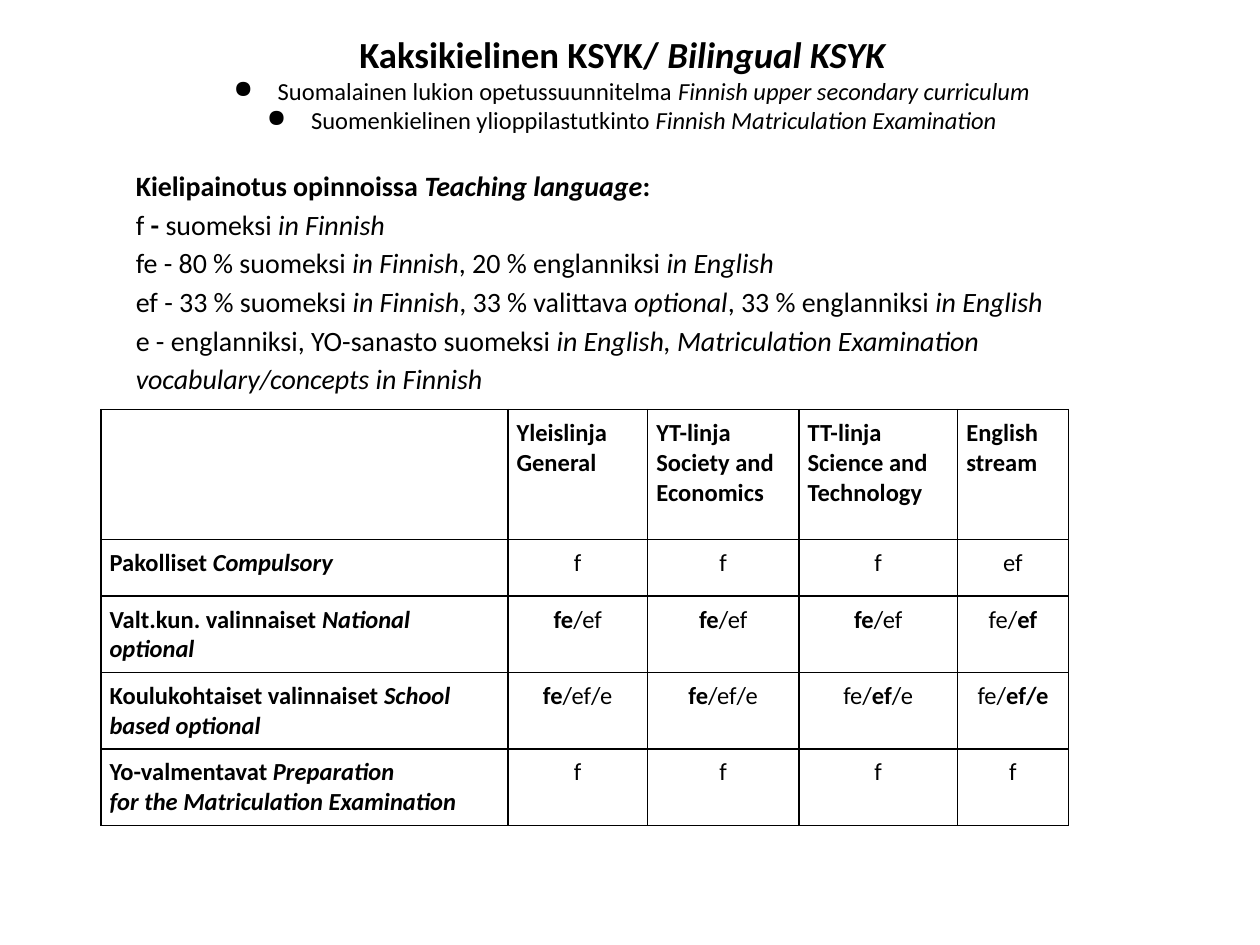
from dataclasses import dataclass

from lxml.etree import SubElement
from pptx import Presentation
from pptx.dml.color import RGBColor
from pptx.enum.text import MSO_ANCHOR, PP_ALIGN
from pptx.oxml.ns import qn
from pptx.util import Inches, Pt


@dataclass(frozen=True)
class Theme:
    font: str = "Calibri"
    ink: str = "000000"
    title: int = 21
    body: int = 16
    small: int = 14
    border: float = 1
    spacing: float = 1.15


THEME = Theme()

# In all wording, *...* is bold and _..._ is italic
TITLE = "*Kaksikielinen KSYK/ _Bilingual KSYK_*"
BULLETS = [
    "Suomalainen lukion opetussuunnitelma _Finnish upper secondary curriculum_",
    "Suomenkielinen ylioppilastutkinto _Finnish Matriculation Examination_",
]
LANGUAGES = [
    "*Kielipainotus opinnoissa _Teaching language_:*",
    "f* - *suomeksi _in Finnish_",
    "fe - 80 % suomeksi _in Finnish_, 20 % englanniksi _in English_",
    "ef - 33 % suomeksi _in Finnish_, 33 % valittava _optional_, 33 % englanniksi _in English_",
    "e - englanniksi, YO-sanasto suomeksi "
    "_in English, Matriculation Examination vocabulary/concepts in Finnish_",
]
STREAMS = [
    ["", "*Yleislinja*\n*General*", "*YT-linja*\n*Society and Economics*",
     "*TT-linja*\n*Science and Technology*", "*English stream*"],
    ["*Pakolliset _Compulsory_*", "f", "f", "f", "ef"],
    ["*Valt.kun. valinnaiset _National optional_*",
     "*fe*/ef", "*fe*/ef", "*fe*/ef", "fe/*ef*"],
    ["*Koulukohtaiset valinnaiset _School based optional_*",
     "*fe*/ef/e", "*fe*/ef/e", "fe/*ef*/e", "fe/*ef/e*"],
    ["*Yo-valmentavat _Preparation_*\n*_for the Matriculation Examination_*",
     "f", "f", "f", "f"],
]
COLUMNS = [3.23, 1.11, 1.2, 1.26, 0.88]
ROWS = [1.03, 0.45, 0.45, 0.45, 0.45]


def write(para, wording, size, align=PP_ALIGN.LEFT, spacing=1.0):
    para.alignment = align
    para.line_spacing = spacing
    para.font.name = THEME.font
    para.font.size = Pt(size)
    para.font.color.rgb = RGBColor.from_string(THEME.ink)
    italic = False
    for i, stretch in enumerate(wording.split("*")):
        for j, piece in enumerate(stretch.split("_")):
            if j:
                italic = not italic
            if piece:
                span = para.add_run()
                span.text = piece
                span.font.bold = i % 2 == 1
                span.font.italic = italic


def indent(para, left, first=0.0, bullet=None):
    properties = para._p.get_or_add_pPr()
    properties.set("marL", str(Inches(left)))
    properties.set("indent", str(Inches(first)))
    if bullet:
        SubElement(properties, qn("a:buChar"), char=bullet)


def add_frame(page, left, top, width, height, inset_top=0.1):
    frame = page.shapes.add_textbox(
        Inches(left), Inches(top), Inches(width), Inches(height)).text_frame
    frame.word_wrap = True
    frame.vertical_anchor = MSO_ANCHOR.TOP
    frame.margin_left = frame.margin_right = frame.margin_bottom = Inches(0.1)
    frame.margin_top = Inches(inset_top)
    return frame


def add_heading(page, left, top, width, height):
    frame = add_frame(page, left, top, width, height, inset_top=0.07)
    write(frame.paragraphs[0], TITLE, THEME.title, PP_ALIGN.CENTER, THEME.spacing)
    for wording in BULLETS:
        para = frame.add_paragraph()
        indent(para, 0.5, -0.35, "●")
        write(para, wording, THEME.small, PP_ALIGN.CENTER)


def add_languages(page, left, top, width, height):
    frame = add_frame(page, left, top, width, height)
    for i, wording in enumerate(LANGUAGES):
        para = frame.add_paragraph() if i else frame.paragraphs[0]
        indent(para, 0.5)
        write(para, wording, THEME.body, spacing=THEME.spacing)


def draw_borders(cell):
    properties = cell._tc.get_or_add_tcPr()
    for side in ("a:lnL", "a:lnR", "a:lnT", "a:lnB"):
        line = SubElement(properties, qn(side), w=str(Pt(THEME.border)))
        fill = SubElement(line, qn("a:solidFill"))
        SubElement(fill, qn("a:srgbClr"), val=THEME.ink)


def add_streams(page, left, top):
    table = page.shapes.add_table(
        len(ROWS), len(COLUMNS), Inches(left), Inches(top),
        Inches(sum(COLUMNS)), Inches(sum(ROWS))).table
    table.first_row = table.horz_banding = False
    for column, width in zip(table.columns, COLUMNS):
        column.width = Inches(width)
    for row, height in zip(table.rows, ROWS):
        row.height = Inches(height)

    for r, entries in enumerate(STREAMS):
        for c, entry in enumerate(entries):
            cell = table.cell(r, c)
            cell.margin_left = cell.margin_right = Inches(0.07)
            cell.margin_top = cell.margin_bottom = Inches(0.07)
            draw_borders(cell)
            cell.fill.background()
            align = PP_ALIGN.CENTER if r and c else PP_ALIGN.LEFT
            for i, wording in enumerate(entry.split("\n")):
                frame = cell.text_frame
                para = frame.add_paragraph() if i else frame.paragraphs[0]
                write(para, wording, THEME.small, align)


def main():
    deck = Presentation()
    deck.slide_width, deck.slide_height = Inches(10), Inches(7.5)
    page = deck.slides.add_slide(deck.slide_layouts[6])
    # Heading with its two bullets
    add_heading(page, 0.44, 0.13, 9, 1.25)
    # Key to the teaching languages
    add_languages(page, 0.48, 1.2, 9, 5.42)
    # Languages by study stream
    add_streams(page, 0.8, 3.25)
    deck.save("out.pptx")


if __name__ == "__main__":
    main()
